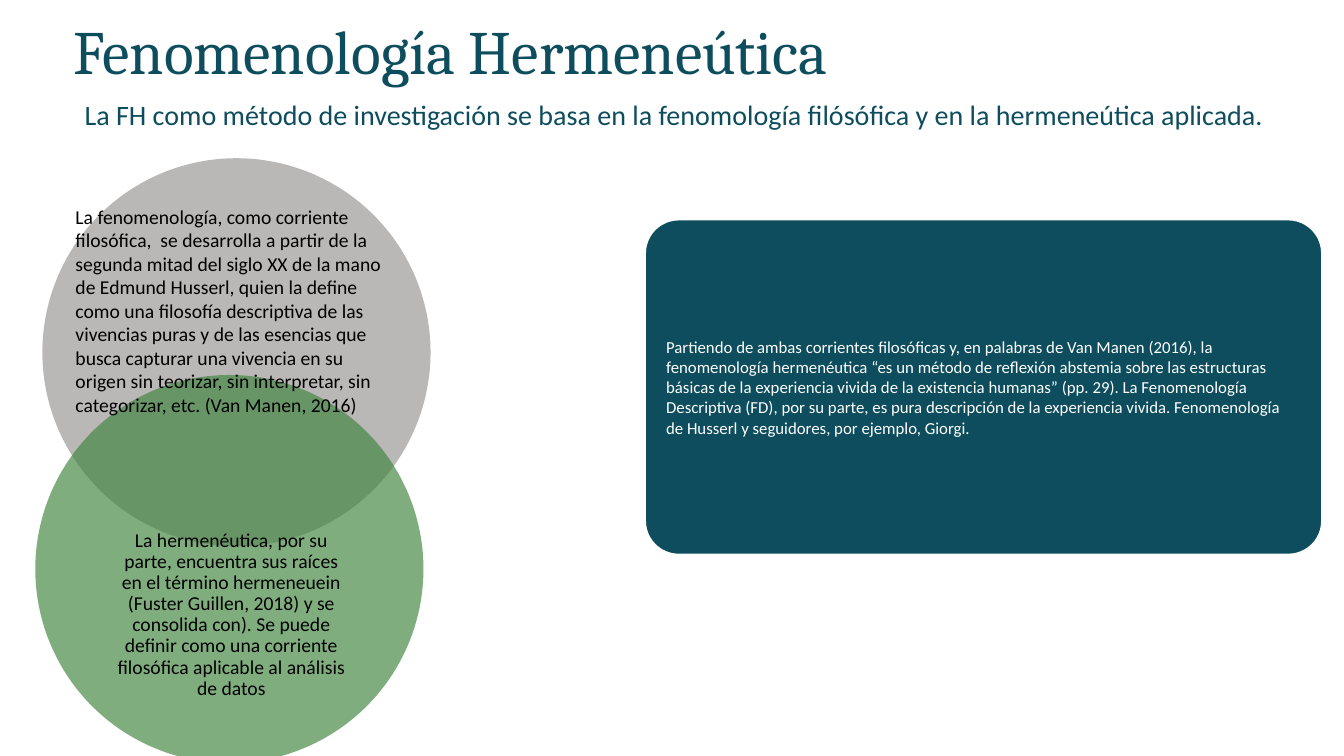
from lxml import etree
from pptx import Presentation
from pptx.dml.color import RGBColor
from pptx.enum.shapes import MSO_SHAPE as SHAPE
from pptx.enum.text import MSO_ANCHOR as ANCHOR, PP_ALIGN as ALIGN
from pptx.oxml.ns import qn
from pptx.util import Inches, Pt

TEAL, WHITE, BLACK = "0D4D5D", "FFFFFF", "000000"


def rgb(color):
    return RGBColor.from_string(color)


def write(sp, text, size, color, align=ALIGN.LEFT, font="Calibri", anchor=ANCHOR.TOP):
    tf = sp.text_frame
    tf.word_wrap = True
    tf.vertical_anchor = anchor
    tf.text = text
    p = tf.paragraphs[0]
    p.alignment = align
    r = p.runs[0]
    r.font.size = Pt(size)
    r.font.name = font
    r.font.color.rgb = rgb(color)
    return p


prs = Presentation()
prs.slide_width, prs.slide_height = Inches(13.33), Inches(7.5)
s = prs.slides.add_slide(prs.slide_layouts[5])

# Title and subtitle
title = s.shapes.title
title.left, title.top = Inches(0.63), Inches(0.08)
title.width, title.height = Inches(12.02), Inches(0.84)
write(title, "Fenomenología Hermeneútica", 44, TEAL, ALIGN.JUSTIFY, "Cambria")

subtitle = s.shapes.add_textbox(Inches(0.74), Inches(0.92), Inches(12.14), Inches(0.44))
write(subtitle, "La FH como método de investigación se basa en la fenomología filósófica "
      "y en la hermeneútica aplicada.", 20, TEAL, ALIGN.JUSTIFY)

# Conclusion card
card = s.shapes.add_shape(SHAPE.ROUNDED_RECTANGLE,
                          Inches(6.4), Inches(2.18), Inches(6.71), Inches(3.32))
card.adjustments[0] = 0.1
card.shadow.inherit = False
card.fill.solid()
card.fill.fore_color.rgb = rgb(TEAL)
card.line.color.rgb = rgb(WHITE)
card.line.width = Pt(1)
tf = card.text_frame
tf.margin_left = tf.margin_right = tf.margin_top = tf.margin_bottom = Inches(0.11)
write(card, "Partiendo de ambas corrientes filosóficas y, en palabras de Van Manen (2016), "
      "la fenomenología hermenéutica “es un método de reflexión abstemia sobre las "
      "estructuras básicas de la experiencia vivida de la existencia humanas” (pp. 29). "
      "La Fenomenología Descriptiva (FD), por su parte, es pura descripción de la "
      "experiencia vivida. Fenomenología de Husserl y seguidores, por ejemplo, Giorgi.",
      12, WHITE, anchor=ANCHOR.MIDDLE)

# Overlapping translucent circles
for left, top, color, opacity in [(0.42, 1.57, "767171", 50), (0.35, 3.72, "3F843C", 66)]:
    circle = s.shapes.add_shape(SHAPE.OVAL, Inches(left), Inches(top),
                                Inches(3.85), Inches(3.85))
    circle.shadow.inherit = False
    circle.fill.solid()
    circle.fill.fore_color.rgb = rgb(color)
    circle.line.fill.background()
    srgb = circle.fill._xPr.find(qn("a:solidFill")).find(qn("a:srgbClr"))
    etree.SubElement(srgb, qn("a:alpha")).set("val", str(opacity * 1000))

# Circle texts
phenomenology = s.shapes.add_textbox(Inches(0.65), Inches(1.98), Inches(3.28), Inches(2.46))
write(phenomenology, "La fenomenología, como corriente filosófica,  se desarrolla a partir de "
      "la segunda mitad del siglo XX de la mano de Edmund Husserl, quien la define como una "
      "filosofía descriptiva de las vivencias puras y de las esencias que busca capturar una "
      "vivencia en su origen sin teorizar, sin interpretar, sin categorizar, etc. "
      "(Van Manen, 2016)", 14, BLACK)

hermeneutics = s.shapes.add_textbox(Inches(1.03), Inches(5.21), Inches(2.53), Inches(1.8))
p = write(hermeneutics, "La hermenéutica, por su parte, encuentra sus raíces en el término "
          "hermeneuein (Fuster Guillen, 2018) y se consolida con). Se puede definir como una "
          "corriente filosófica aplicable al análisis de datos", 14, BLACK, ALIGN.CENTER)
p.line_spacing = 0.9

prs.save("out.pptx")
